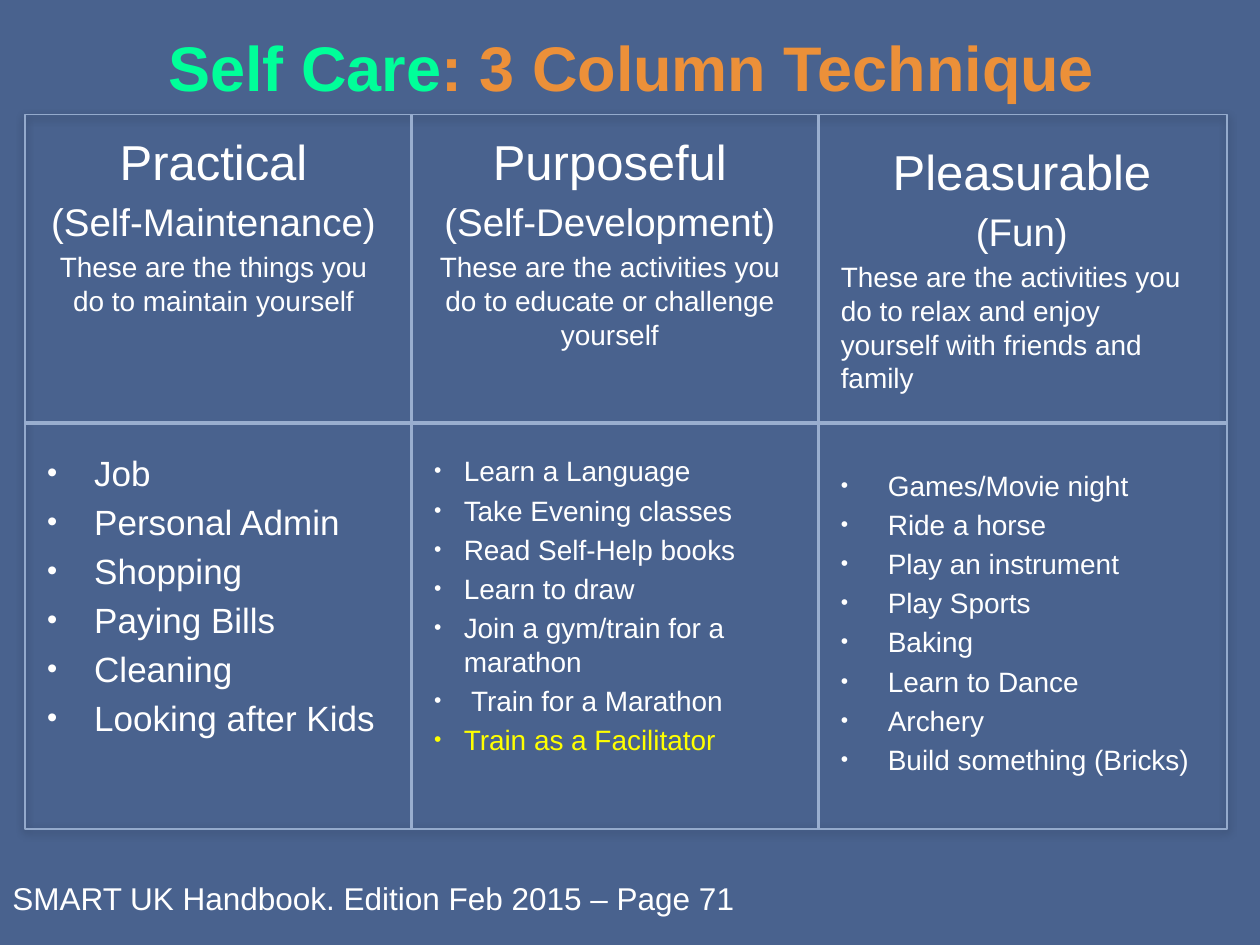
import pptx
import pptx.util
import pptx.dml.color
import pptx.enum.shapes
import pptx.enum.text
import pptx.oxml
import pptx.oxml.ns
from lxml import etree

Cm, Pt = pptx.util.Cm, pptx.util.Pt
ALIGN = pptx.enum.text.PP_ALIGN
COLORS = {
    "background": "49628E", "text": "FFFFFF", "title": "EC9039",
    "accent": "00FF99", "highlight": "FFFF00",
    "frame": "94AACC", "divider": "99AECF", "shadow": "000000",
}


class Deck:
    font = "Arial"

    def __init__(self):
        self.prs = pptx.Presentation()
        self.prs.slide_width, self.prs.slide_height = Cm(25.4), Cm(19.05)
        self.s = self.prs.slides.add_slide(self.prs.slide_layouts[6])
        fill = self.s.background.fill
        fill.solid()
        fill.fore_color.rgb = self.rgb("background")

    def rgb(self, name):
        return pptx.dml.color.RGBColor.from_string(COLORS[name])

    def text_box(self, left, top, width, height, anchor="TOP"):
        tf = self.s.shapes.add_textbox(Cm(left), Cm(top), Cm(width), Cm(height)).text_frame
        tf.word_wrap = True
        tf.vertical_anchor = getattr(pptx.enum.text.MSO_ANCHOR, anchor)
        return tf

    def style(self, r, size, color="text", bold=False):
        r.font.name, r.font.size, r.font.bold = self.font, Pt(size), bold
        r.font.color.rgb = self.rgb(color)

    def paragraph(self, tf, text, size, color="text", align=ALIGN.LEFT, before=None):
        first = not tf.text
        p = tf.paragraphs[0] if first else tf.add_paragraph()
        p.text = text
        p.alignment = align
        if not first:
            p.space_before = Pt(size * 0.2 if before is None else before)
        for r in p.runs:
            self.style(r, size, color)
        return p

    def bullet(self, p, indent, percent):
        pPr = p._p.get_or_add_pPr()
        pPr.set("marL", str(Cm(indent)))
        pPr.set("indent", str(-Cm(indent)))
        for tag, key, value in (("buSzPct", "val", str(percent * 1000)),
                                ("buFont", "typeface", self.font),
                                ("buChar", "char", "•")):
            etree.SubElement(pPr, pptx.oxml.ns.qn("a:" + tag)).set(key, value)

    def title(self, box, parts):
        p = self.text_box(*box, anchor="MIDDLE").paragraphs[0]
        p.alignment = ALIGN.CENTER
        for text, color in parts:
            r = p.add_run()
            r.text = text
            self.style(r, 36, color, True)

    def column(self, box, heading, subheading, description, align, items,
               size, gap, indent, percent, highlighted=()):
        tf = self.text_box(*box)
        self.paragraph(tf, heading, 28, align=ALIGN.CENTER)
        self.paragraph(tf, subheading, 22, align=ALIGN.CENTER)
        self.paragraph(tf, description, 16, align=align)
        for i, item in enumerate(items):
            color = "highlight" if item in highlighted else "text"
            p = self.paragraph(tf, item, size, color, before=None if i else gap)
            self.bullet(p, indent, percent)

    def frame(self, left, top, width, height):
        rect = self.s.shapes.add_shape(pptx.enum.shapes.MSO_SHAPE.RECTANGLE,
                                       Cm(left), Cm(top), Cm(width), Cm(height))
        rect.fill.background()
        rect.line.color.rgb = self.rgb("frame")
        rect.line.width = Pt(1)
        rect.shadow.inherit = False
        effects = rect._element.spPr.find(pptx.oxml.ns.qn("a:effectLst"))
        effects.append(pptx.oxml.parse_xml(
            f'<a:outerShdw {pptx.oxml.ns.nsdecls("a")} blurRad="{Pt(5)}" dist="{Pt(2)}" '
            f'dir="5400000" rotWithShape="0"><a:srgbClr val="{COLORS["shadow"]}">'
            '<a:alpha val="40000"/></a:srgbClr></a:outerShdw>'))

    def divider(self, x1, y1, x2, y2):
        line = self.s.shapes.add_connector(pptx.enum.shapes.MSO_CONNECTOR.STRAIGHT,
                                           Cm(x1), Cm(y1), Cm(x2), Cm(y2))
        line.line.color.rgb = self.rgb("divider")
        line.line.width = Pt(2)
        etree.SubElement(line._element.spPr, pptx.oxml.ns.qn("a:effectLst"))


def main():
    deck = Deck()
    deck.title((1.3, 0.03, 22.86, 2.62),
               [("Self Care", "accent"), (": 3 Column Technique", "title")])
    deck.column((0.7, 2.53, 7.21, 14.6), "Practical", "(Self-Maintenance)",
                "These are the things you do to maintain yourself", ALIGN.CENTER,
                ["Job", "Personal Admin", "Shopping", "Paying Bills", "Cleaning",
                 "Looking after Kids"],
                size=20, gap=77, indent=0.95, percent=83)
    deck.column((8.5, 2.53, 7.59, 14.6), "Purposeful", "(Self-Development)",
                "These are the activities you do to educate or challenge yourself",
                ALIGN.CENTER,
                ["Learn a Language", "Take Evening classes", "Read Self-Help books",
                 "Learn to draw", "Join a gym/train for a marathon",
                 " Train for a Marathon", "Train as a Facilitator"],
                size=16, gap=59, indent=0.6, percent=75,
                highlighted=["Train as a Facilitator"])
    deck.column((16.7, 2.73, 7.8, 14.4), "Pleasurable", "(Fun)",
                "These are the activities you do to relax and enjoy yourself "
                "with friends and family", ALIGN.LEFT,
                ["Games/Movie night", "Ride a horse", "Play an instrument", "Play Sports",
                 "Baking", "Learn to Dance", "Archery", "Build something (Bricks)"],
                size=16, gap=42.3, indent=0.95, percent=75)

    left, top, width, height = 0.51, 2.31, 24.23, 14.4
    deck.frame(left, top, width, height)
    for x in (8.3, 16.5):
        deck.divider(x, top, x, top + height)
    deck.divider(left, 8.53, left + width, 8.53)

    footer = deck.text_box(0, 17.6, 15.1, 1.02)
    deck.paragraph(footer, "SMART UK Handbook. Edition Feb 2015 – Page 71", 18)
    deck.prs.save("out.pptx")


if __name__ == "__main__":
    main()
